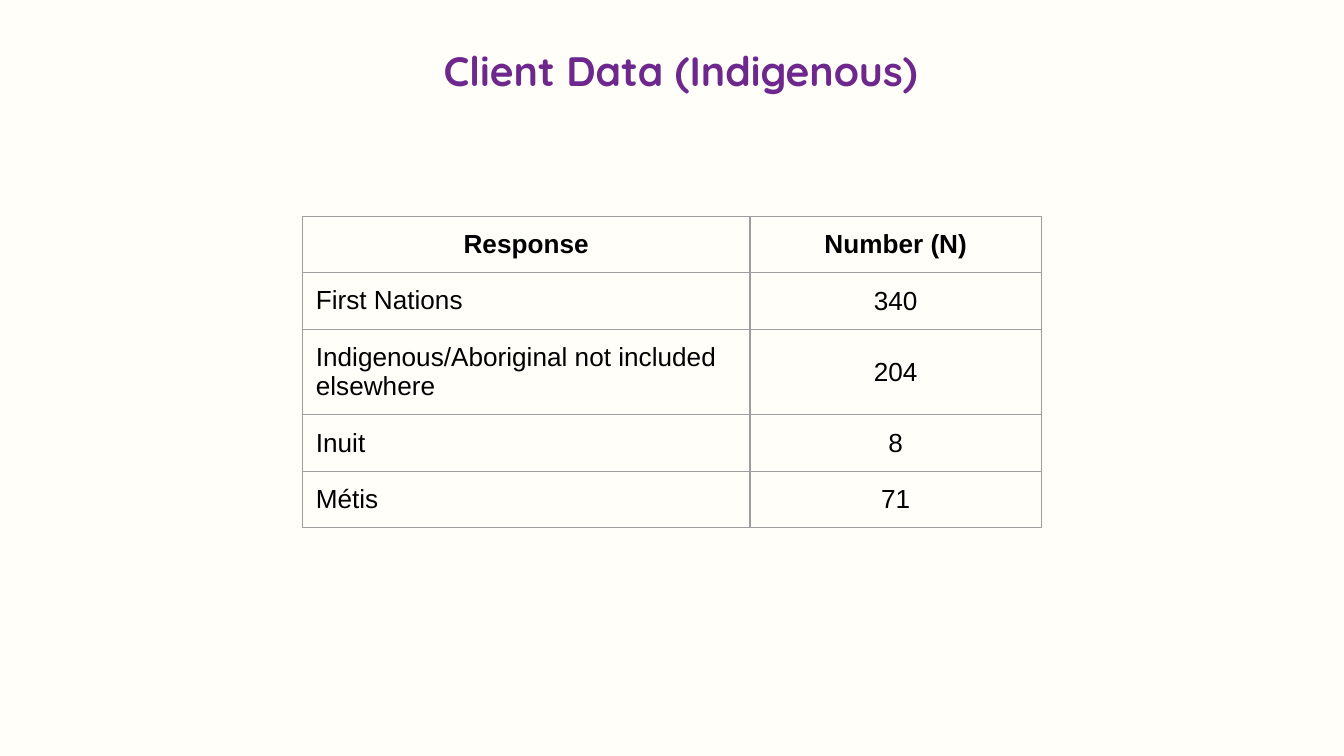
from dataclasses import dataclass

from lxml import etree
from pptx import Presentation
from pptx.dml.color import RGBColor
from pptx.enum.text import MSO_ANCHOR, PP_ALIGN
from pptx.oxml.ns import qn
from pptx.util import Inches, Pt

LEFT, CENTER = PP_ALIGN.LEFT, PP_ALIGN.CENTER
TOP, MIDDLE = MSO_ANCHOR.TOP, MSO_ANCHOR.MIDDLE
TITLE_ONLY = 5


@dataclass(frozen=True)
class Theme:
    """Colours, fonts and sizes of the deck."""
    background: str = "FFFEF9"
    title: str = "6E288D"
    text: str = "000000"
    border: str = "9E9E9E"
    title_font: str = "Quicksand"
    body_font: str = "Arial"
    title_size: int = 22
    body_size: int = 14
    border_width: float = 0.75
    inset: float = 0.1


THEME = Theme()
ROWS = [
    ("Response", "Number (N)"),
    ("First Nations", "340"),
    ("Indigenous/Aboriginal not included elsewhere", "204"),
    ("Inuit", "8"),
    ("Métis", "71"),
]


def add_text(tf, text, font, size, color, bold, align):
    """Write one formatted run into the first paragraph of a text frame."""
    p = tf.paragraphs[0]
    p.alignment = align
    r = p.add_run()
    r.text = text
    r.font.name = font
    r.font.size = Pt(size)
    r.font.bold = bold
    r.font.color.rgb = RGBColor.from_string(color)


def set_insets(target):
    """Give a text frame or table cell equal margins."""
    for side in ("left", "right", "top", "bottom"):
        setattr(target, f"margin_{side}", Inches(THEME.inset))


def set_borders(cell):
    """Outline the four sides of a table cell."""
    tc_pr = cell._tc.get_or_add_tcPr()
    for i, side in enumerate(("lnL", "lnR", "lnT", "lnB")):
        ln = etree.Element(qn(f"a:{side}"), w=str(Pt(THEME.border_width)))
        fill = etree.SubElement(ln, qn("a:solidFill"))
        etree.SubElement(fill, qn("a:srgbClr"), val=THEME.border)
        tc_pr.insert(i, ln)


def place_title(s, box, text):
    """Move and format the title placeholder."""
    sp = s.shapes.title
    sp.left, sp.top, sp.width, sp.height = map(Inches, box)
    tf = sp.text_frame
    tf.word_wrap = True
    tf.vertical_anchor = MIDDLE
    set_insets(tf)
    add_text(tf, text, THEME.title_font, THEME.title_size, THEME.title, True, LEFT)


def place_table(s, box, rows, col_weights, row_weights):
    """Fill a bordered table whose columns and rows share the box by weight."""
    frame = s.shapes.add_table(len(rows), len(col_weights), *map(Inches, box))
    table = frame.table
    table.horz_banding = False
    for col, weight in zip(table.columns, col_weights):
        col.width = Inches(box[2] * weight / sum(col_weights))
    for i, (values, weight) in enumerate(zip(rows, row_weights)):
        table.rows[i].height = Inches(box[3] * weight / sum(row_weights))
        for j, value in enumerate(values):
            cell = table.cell(i, j)
            header, label = i == 0, j == 0
            cell.fill.background()
            set_insets(cell)
            set_borders(cell)
            cell.vertical_anchor = TOP if header or label else MIDDLE
            align = LEFT if label and not header else CENTER
            add_text(cell.text_frame, value, THEME.body_font, THEME.body_size,
                     THEME.text, header, align)


def main():
    """Build the client data slide."""
    prs = Presentation()
    prs.slide_width = Inches(10)
    prs.slide_height = prs.slide_width * 9 // 16
    s = prs.slides.add_slide(prs.slide_layouts[TITLE_ONLY])
    s.background.fill.solid()
    s.background.fill.fore_color.rgb = RGBColor.from_string(THEME.background)
    place_title(s, (3.2, 0.31, 3.86, 0.42), "Client Data (Indigenous)")
    place_table(s, (2.25, 1.61, 5.5, 2.31), ROWS, (3.33, 2.17), (2, 2, 3, 2, 2))
    prs.save("out.pptx")


if __name__ == "__main__":
    main()
